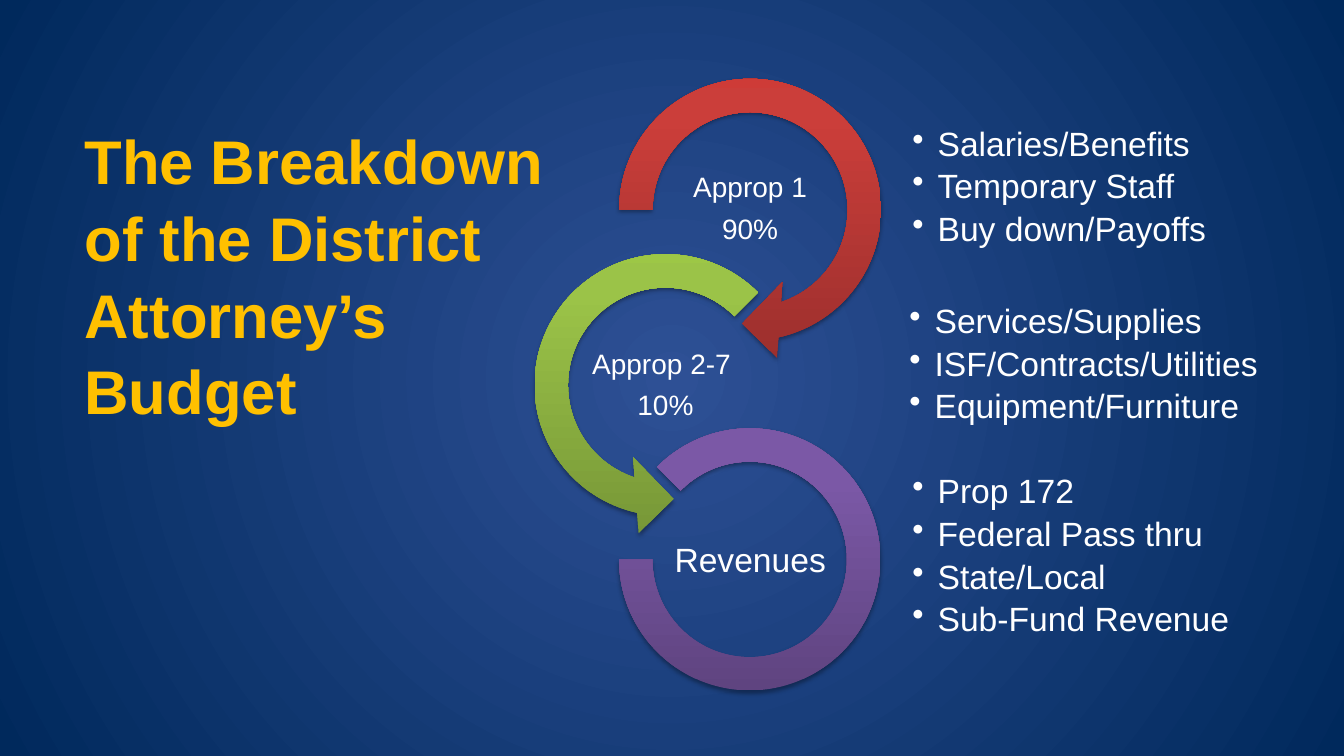
import pptx
import pptx.util
import pptx.dml.color
import pptx.enum.shapes
import pptx.enum.text
import pptx.oxml
import pptx.oxml.ns
from lxml import etree

Inches, Pt = pptx.util.Inches, pptx.util.Pt
KIND = pptx.enum.shapes.MSO_SHAPE
ALIGN = pptx.enum.text.PP_ALIGN
MIDDLE = pptx.enum.text.MSO_ANCHOR.MIDDLE
qn = pptx.oxml.ns.qn

COLORS = {"title": "FFC000", "text": "FFFFFF", "shadow": "000000"}
SHADES = {
    "back": [(0, "2E5095"), (100, "00295C")],
    "red": [(0, "9C2F2D"), (80, "CB3E3A"), (100, "CE3B37")],
    "green": [(0, "779737"), (80, "9BC348"), (100, "9DC746")],
    "purple": [(0, "5F4480"), (80, "7B58A6"), (100, "7C57A8")],
}
TITLE = "The Breakdown of the District Attorney’s Budget"
RINGS = [
    {
        "kind": KIND.CIRCULAR_ARROW, "shade": "red",
        "adjust": (0.1098, 11.423, 45, 108, 0.125),
        "ring": (5.93, 0.57, 3.02, 3.02),
        "label": ["Approp 1", "90%"], "spot": (6.6, 1.66), "size": 20,
        "items": ["Salaries/Benefits", "Temporary Staff", "Buy down/Payoffs"],
        "list": (9.03, 0.92, 4, 1.89),
    },
    {
        "kind": KIND.LEFT_CIRCULAR_ARROW, "shade": "green",
        "adjust": (0.1098, 11.423, 63, 189, 0.125),
        "ring": (5.09, 2.31, 3.02, 3.02),
        "label": ["Approp 2-7 ", "10%"], "spot": (5.76, 3.41), "size": 20,
        "items": ["Services/Supplies", "ISF/Contracts/Utilities",
                  "Equipment/Furniture"],
        "list": (9, 3.02, 3.78, 1.21),
    },
    {
        "kind": KIND.BLOCK_ARC, "shade": "purple",
        "adjust": (135, 108, 0.1274),
        "ring": (6.14, 4.25, 2.59, 2.6),
        "label": ["Revenues"], "spot": (6.6, 5.15), "size": 24,
        "items": ["Prop 172", "Federal Pass thru", "State/Local",
                  "Sub-Fund Revenue"],
        "list": (9.03, 4.42, 4, 2.21),
    },
]
LABEL = (1.68, 0.84)


def add(parent, tag, **attrs):
    node = etree.SubElement(parent, qn(tag))
    for key, value in attrs.items():
        node.set(key, str(value))
    return node


def shade(owner, name, round_=False):
    grad = owner.find(".//" + qn("a:gradFill"))
    for child in list(grad):
        grad.remove(child)
    stops = add(grad, "a:gsLst")
    for place, color in SHADES[name]:
        stop = add(stops, "a:gs", pos=place * 1000)
        add(stop, "a:srgbClr", val=color)
    if round_:
        way = add(grad, "a:path", path="circle")
        add(way, "a:fillToRect", l=50000, t=50000, r=50000, b=50000)
    else:
        add(grad, "a:lin", ang=270 * 60000, scaled=0)


def add_ring(slide, ring):
    shape = slide.shapes.add_shape(ring["kind"], *map(Inches, ring["ring"]))
    for index, value in enumerate(ring["adjust"]):
        shape.adjustments[index] = value
    shape.line.fill.background()
    shape.fill.gradient()
    shade(shape.element, ring["shade"])
    shape.shadow.inherit = False
    effect = shape.element.find(".//" + qn("a:effectLst"))
    cast = add(effect, "a:outerShdw", blurRad=Pt(3.1), dist=Pt(1.8),
               dir=90 * 60000, rotWithShape=0)
    color = add(cast, "a:srgbClr", val=COLORS["shadow"])
    add(color, "a:alpha", val=35000)


def set_font(para, size, color, bold=False):
    font = para.font
    font.name, font.size, font.bold = "Arial", Pt(size), bold
    font.color.rgb = pptx.dml.color.RGBColor.from_string(COLORS[color])


def add_text(slide, place, lines, size, inset, gap, bullet=False):
    frame = slide.shapes.add_textbox(*map(Inches, place)).text_frame
    frame.word_wrap = True
    frame.vertical_anchor = MIDDLE
    frame.margin_left = frame.margin_right = Inches(inset)
    frame.margin_top = frame.margin_bottom = Inches(inset)
    frame.text = "\n".join(lines)
    for para in frame.paragraphs:
        para.line_spacing = 0.9
        para.space_after = Pt(gap)
        if bullet:
            para.level = 1
            props = para._p.get_or_add_pPr()
            props.set("marL", str(Inches(0.25)))
            props.set("indent", str(-Inches(0.25)))
            add(props, "a:buChar", char="•")
        else:
            para.alignment = ALIGN.CENTER
        set_font(para, size, "text")


def main():
    """Build the budget breakdown slide."""
    deck = pptx.Presentation()
    deck.slide_width, deck.slide_height = Inches(13.33), Inches(7.5)
    slide = deck.slides.add_slide(deck.slide_layouts[6])
    slide.background.fill.gradient()
    shade(slide.element, "back", True)
    for ring in RINGS:
        add_ring(slide, ring)
        add_text(slide, ring["list"], ring["items"], 24, 0.02, 4.5, True)
        add_text(slide, ring["spot"] + LABEL, ring["label"], ring["size"],
                 ring["size"] / 1000, 8)
    box = slide.shapes.add_textbox(*map(Inches, (0.74, 1.14, 5.16, 4.54)))
    box.text_frame.word_wrap = True
    box.text_frame.text = TITLE
    title = box.text_frame.paragraphs[0]
    title.line_spacing = 1.04
    set_font(title, 44, "title", True)
    deck.save("out.pptx")


if __name__ == "__main__":
    main()
